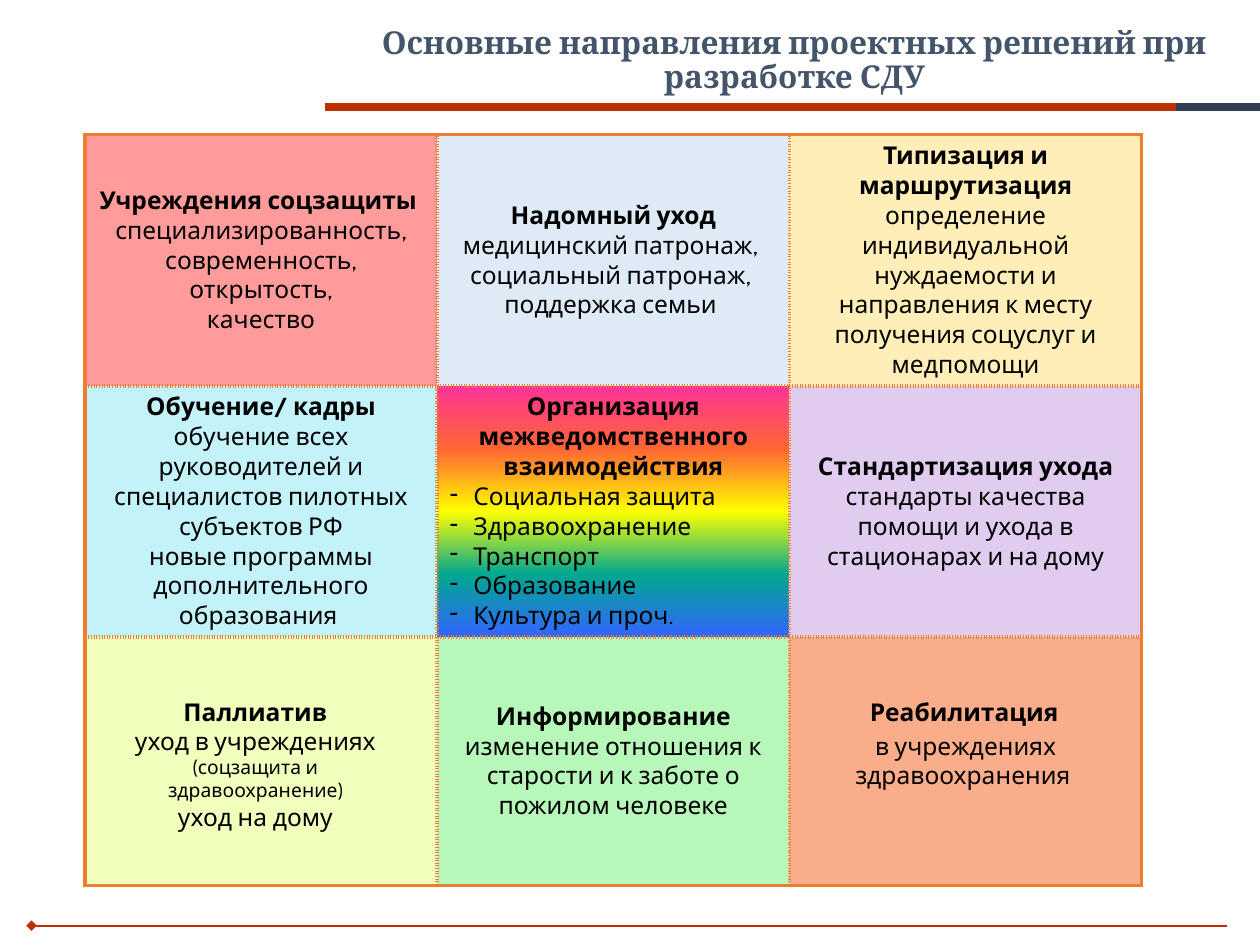
from lxml import etree
from pptx import Presentation
from pptx.dml.color import RGBColor as Rgb
from pptx.enum.shapes import MSO_CONNECTOR as Conn
from pptx.enum.text import MSO_ANCHOR as Anchor, MSO_AUTO_SIZE as Auto, PP_ALIGN as Align
from pptx.oxml import parse_xml
from pptx.oxml.ns import nsdecls, qn
from pptx.util import Pt

HEX = {
    "title": "44546A", "text": "000000", "rule": "BC3004", "dark": "333F50",
    "edge": "ED7D31", "rose": "FF9B9B", "sky": "DEEBF7", "sand": "FFEEB7",
    "aqua": "C3F3F9", "lilac": "E1CCF0", "lime": "F1FFBD", "mint": "B7F7B9",
    "coral": "FAAD8A",
}
RAINBOW = ["FF3399", "FF6633", "FFFF00", "01A78F", "3366FF"]

# Formats of the runs
HEAD = {"name": "Cabin", "size": Pt(14), "bold": True}
BODY = {**HEAD, "bold": False}
SMALL = {**BODY, "size": Pt(11)}
TITLE = {"name": "Cambria", "size": Pt(18), "bold": True}


def topic(head, *lines):
    """A bold heading, then one paragraph for each line."""
    return [[(head, HEAD)]] + [[(line, BODY)] for line in lines]


# Cells by row: fill, paragraphs, number of the first dashed paragraph
GRID = [
    [("rose", [[("Учреждения соцзащиты ", HEAD), (" специализированность,", BODY)],
               [(" современность, ", BODY)], [("открытость,", BODY)],
               [("качество", BODY)]], None),
     ("sky", topic("Надомный уход", "медицинский патронаж, ",
                   "социальный патронаж, ", "поддержка семьи "), None),
     ("sand", topic("Типизация и маршрутизация",
                    "определение индивидуальной нуждаемости и направления "
                    "к месту получения соцуслуг и медпомощи"), None)],
    [("aqua", topic("Обучение/ кадры",
                    "обучение всех руководителей и специалистов пилотных субъектов РФ",
                    "новые программы дополнительного образования "), None),
     ("rainbow", topic("Организация межведомственного взаимодействия",
                       "Социальная защита", "Здравоохранение", "Транспорт",
                       "Образование", "Культура и проч."), 1),
     ("lilac", topic("Стандартизация ухода",
                     "стандарты качества помощи и ухода в стационарах и на дому"), None)],
    [("lime", [], None),
     ("mint", topic("Информирование",
                    "изменение отношения к старости и к заботе о пожилом человеке"), None),
     ("coral", [[("в учреждениях здравоохранения ", BODY)]], None)],
]
CARE = [[("Паллиатив", HEAD)],
        [("уход в учреждениях ", BODY), ("(соцзащита и здравоохранение)", SMALL)],
        [("уход на дому", BODY)]]
REHAB = topic("Реабилитация")


def color(name):
    return Rgb.from_string(HEX[name])


def add_run(par, text, form, ink="text"):
    run = par.add_run()
    run.text = text
    for key, value in form.items():
        setattr(run.font, key, value)
    run.font.color.rgb = color(ink)
    return run


def write(frame, pars, dash=None):
    for i, runs in enumerate(pars):
        par = frame.add_paragraph() if i else frame.paragraphs[0]
        par.alignment = Align.CENTER
        if dash is not None and i >= dash:
            par.alignment = Align.LEFT
            props = par._p.get_or_add_pPr()
            props.set("marL", str(Pt(13.5)))
            props.set("indent", str(-Pt(13.5)))
            etree.SubElement(props, qn("a:buChar"), char="-")
        for text, form in runs:
            add_run(par, text, form)


def add_title(slide, x, y, w, h):
    title = slide.shapes.title
    title.left, title.top, title.width, title.height = map(Pt, (x, y, w, h))
    frame = title.text_frame
    form = {"margin_left": 0, "margin_top": Pt(3), "margin_right": 0,
            "margin_bottom": 0, "word_wrap": True, "auto_size": Auto.NONE,
            "vertical_anchor": Anchor.TOP}
    for key, value in form.items():
        setattr(frame, key, value)
    par = frame.paragraphs[0]
    par.alignment, par.line_spacing = Align.CENTER, 0.9
    run = add_run(par, "Основные направления проектных решений при разработке СДУ",
                  TITLE, "title")
    # Soft shadow of the letters
    run.font._element.find(qn("a:solidFill")).addnext(parse_xml(
        f'<a:effectLst {nsdecls("a")}><a:outerShdw blurRad="38100" dist="38100" '
        'dir="2700000" algn="tl"><a:srgbClr val="000000"><a:alpha val="43000"/>'
        '</a:srgbClr></a:outerShdw></a:effectLst>'))


def set_edges(cell, outer):
    """Solid on the outside of the grid, dotted within."""
    props = cell._tc.get_or_add_tcPr()
    for side in "LRTB":
        dash = "solid" if side in outer else "sysDot"
        props.append(parse_xml(
            f'<a:ln{side} {nsdecls("a")} w="{Pt(2.25)}"><a:solidFill>'
            f'<a:srgbClr val="{HEX["edge"]}"/></a:solidFill>'
            f'<a:prstDash val="{dash}"/></a:ln{side}>'))


def set_fill(cell, name):
    if name != "rainbow":
        cell.fill.solid()
        cell.fill.fore_color.rgb = color(name)
        return
    stops = "".join(f'<a:gs pos="{i * 25000}"><a:srgbClr val="{tint}"/></a:gs>'
                    for i, tint in enumerate(RAINBOW))
    cell._tc.get_or_add_tcPr().append(parse_xml(
        f'<a:gradFill {nsdecls("a")}><a:gsLst>{stops}</a:gsLst>'
        '<a:lin ang="5400000" scaled="0"/></a:gradFill>'))


def add_grid(slide, x, y, w, h):
    rows, cols = len(GRID), len(GRID[0])
    table = slide.shapes.add_table(rows, cols, Pt(x), Pt(y), Pt(w), Pt(h)).table
    table.first_row = table.horz_banding = False
    for col in table.columns:
        col.width = Pt(w / cols)
    for r, line in enumerate(GRID):
        table.rows[r].height = Pt(h / rows)
        for c, (fill, pars, dash) in enumerate(line):
            cell = table.cell(r, c)
            cell.vertical_anchor = Anchor.MIDDLE
            edges = {"L": c == 0, "R": c == cols - 1, "T": r == 0, "B": r == rows - 1}
            set_edges(cell, [side for side, out in edges.items() if out])
            set_fill(cell, fill)
            write(cell.text_frame, pars, dash)


def add_label(slide, x, y, w, h, pars):
    frame = slide.shapes.add_textbox(Pt(x), Pt(y), Pt(w), Pt(h)).text_frame
    frame.word_wrap = True
    frame.auto_size = Auto.SHAPE_TO_FIT_TEXT
    write(frame, pars)


def add_rule(slide, start, end, y, ink, width, tail=None):
    rule = slide.shapes.add_connector(Conn.STRAIGHT, Pt(start), Pt(y), Pt(end), Pt(y))
    rule.line.color.rgb = color(ink)
    rule.line.width = Pt(width)
    if tail:
        etree.SubElement(rule.line._get_or_add_ln(), qn("a:tailEnd"), type=tail)
    etree.SubElement(rule._element.spPr, qn("a:effectLst"))


def main():
    deck = Presentation()
    deck.slide_width, deck.slide_height = Pt(720), Pt(540)
    slide = deck.slides.add_slide(deck.slide_layouts[5])
    add_title(slide, 188, 12.5, 532, 36.5)
    add_grid(slide, 48.5, 77, 604, 425.5)
    # Labels over the bottom row
    add_label(slide, 53, 394.5, 186, 71, CARE)
    add_label(slide, 458, 394.5, 186, 24.5, REHAB)
    # Rules under the title and at the foot
    add_rule(slide, 186, 673, 61, "rule", 4.5)
    add_rule(slide, 672, 720, 61, "dark", 4.5)
    add_rule(slide, 701, 18, 529, "rule", 1, "diamond")
    deck.save("out.pptx")


if __name__ == "__main__":
    main()
